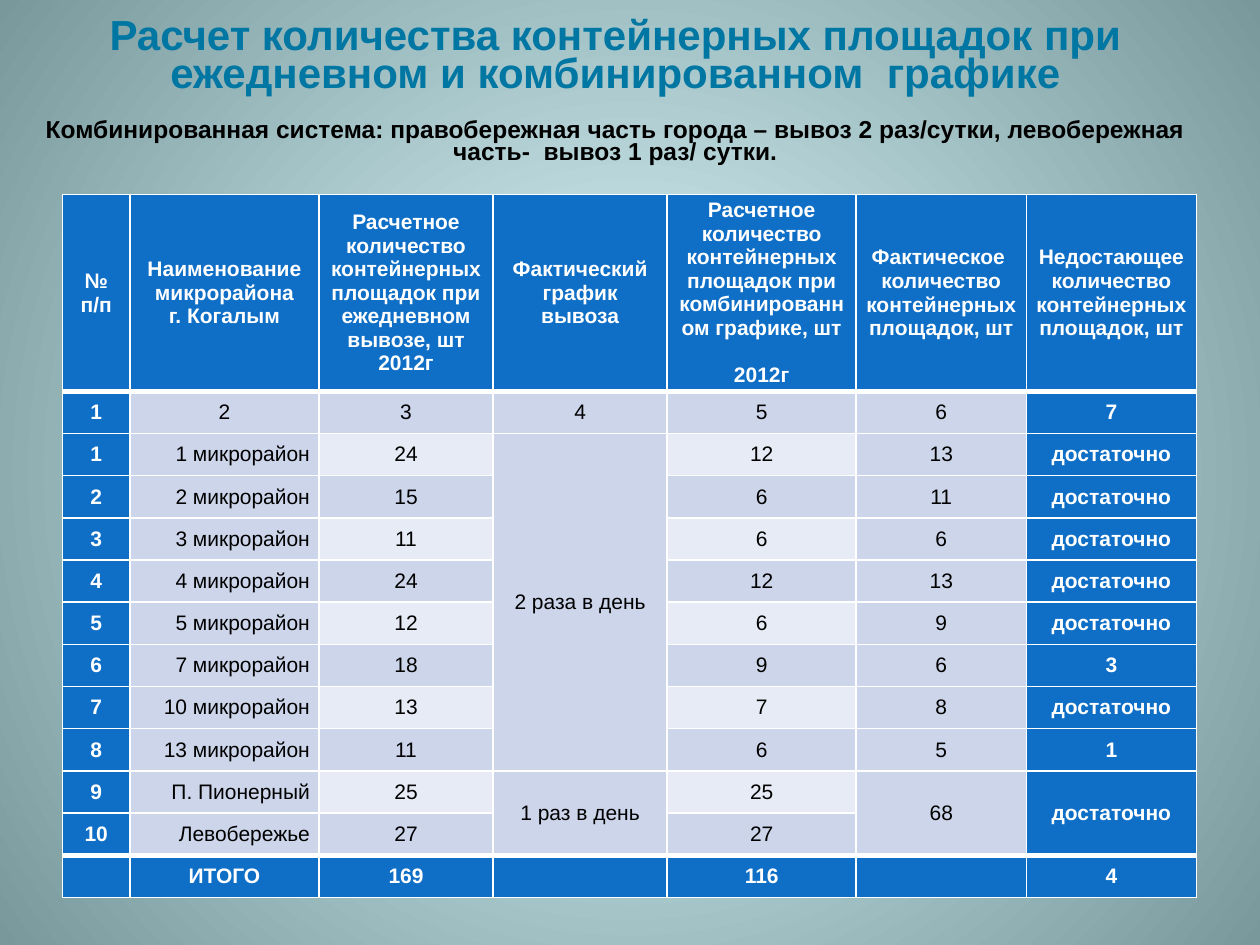
"""Build the slide with the container site calculation table."""
from dataclasses import dataclass

from lxml.etree import SubElement
from pptx import Presentation
from pptx.dml.color import RGBColor as Color
from pptx.enum.text import MSO_ANCHOR as Anchor, MSO_AUTO_SIZE as AutoSize, PP_ALIGN as Align
from pptx.oxml import parse_xml
from pptx.oxml.ns import nsdecls, qn
from pptx.util import Cm, Pt


@dataclass(frozen=True)
class Theme:
    """Keeps the colours, type sizes and line widths."""

    font: str = "Arial"
    title: str = "0076A3"
    dark: str = "000000"
    white: str = "FFFFFF"
    accent: str = "0F6FC6"
    band: str = "CCD5EA"
    light: str = "E7EBF5"
    glow: str = "DEFBFF"
    edge: str = "79989C"
    title_size: int = 24
    subtitle_size: int = 14
    table_size: int = 12
    thin: int = 1
    thick: int = 3


TITLE = "Расчет количества контейнерных площадок при ежедневном и комбинированном  графике"
SUBTITLE = ("Комбинированная система: правобережная часть города – вывоз 2 раз/сутки, "
            "левобережная часть-  вывоз 1 раз/ сутки.")
ENOUGH = "достаточно"
ROWS = [
    ["№\nп/п", "Наименование микрорайона\nг. Когалым",
     "Расчетное количество контейнерных площадок при ежедневном вывозе, шт\n2012г",
     "Фактический график вывоза",
     "Расчетное количество контейнерных площадок при комбинированном графике, шт\n2012г",
     "Фактическое  количество контейнерных площадок, шт",
     "Недостающее количество контейнерных площадок, шт"],
    ["1", "2", "3", "4", "5", "6", "7"],
    ["1", "1 микрорайон", "24", "2 раза в день", "12", "13", ENOUGH],
    ["2", "2 микрорайон", "15", "", "6", "11", ENOUGH],
    ["3", "3 микрорайон", "11", "", "6", "6", ENOUGH],
    ["4", "4 микрорайон", "24", "", "12", "13", ENOUGH],
    ["5", "5 микрорайон", "12", "", "6", "9", ENOUGH],
    ["6", "7 микрорайон", "18", "", "9", "6", "3"],
    ["7", "10 микрорайон", "13", "", "7", "8", ENOUGH],
    ["8", "13 микрорайон", "11", "", "6", "5", "1"],
    ["9", "П. Пионерный", "25", "1 раз в день", "25", "68", ENOUGH],
    ["10", "Левобережье", "27", "", "27", "", ""],
    ["", "ИТОГО", "169", "", "116", "", "4"],
]
COLUMN_WIDTHS = [1.36, 3.81, 3.51, 3.51, 3.81, 3.43, 3.43]
HEADER_HEIGHT, ROW_HEIGHT = 3.97, 0.85
MERGES = [(2, 3, 9, 3), (10, 3, 11, 3), (10, 5, 11, 5), (10, 6, 11, 6)]


def apply(target, values):
    """Set each named attribute of the target."""
    for name, value in values.items():
        setattr(target, name, value)


class SlideBuilder:
    """Holds the style and the current slide."""

    def __init__(self, presentation, theme):
        self.theme = theme
        self.slide = presentation.slides.add_slide(presentation.slide_layouts[5])

    def background(self):
        """Fill the slide with a radial gradient."""
        fill = self.slide.background.fill
        fill.gradient()
        for stop, color in zip(fill.gradient_stops, (self.theme.glow, self.theme.edge)):
            stop.color.rgb = Color.from_string(color)
        linear = next(self.slide.element.iter(qn("a:lin")))
        linear.getparent().replace(linear, parse_xml(
            f'<a:path {nsdecls("a")} path="circle">'
            '<a:fillToRect l="50000" t="50000" r="50000" b="50000"/></a:path>'))

    def text(self, paragraph, text, size, color, bold, **layout):
        """Put one styled run into a paragraph."""
        apply(paragraph, {"alignment": Align.CENTER, **layout})
        run = paragraph.add_run()
        run.text = text
        apply(run.font, {"name": self.theme.font, "size": Pt(size), "bold": bold})
        run.font.color.rgb = Color.from_string(color)

    def title(self, title, subtitle):
        """Set the heading and the explanation below it."""
        theme, shape = self.theme, self.slide.shapes.title
        apply(shape, {"left": Cm(0), "top": Cm(0), "width": Cm(24.81), "height": Cm(3.73)})
        frame = shape.text_frame
        apply(frame, {"word_wrap": True, "auto_size": AutoSize.NONE,
                      "vertical_anchor": Anchor.MIDDLE})
        self.text(frame.paragraphs[0], title, theme.title_size, theme.title, True,
                  line_spacing=0.75)
        self.text(frame.add_paragraph(), subtitle, theme.subtitle_size, theme.dark, True,
                  line_spacing=0.75, space_before=Pt(14))

    def borders(self, cell, top, bottom):
        """Draw white lines round a cell."""
        properties = cell._tc.get_or_add_tcPr()
        widths = {"lnL": self.theme.thin, "lnR": self.theme.thin, "lnT": top, "lnB": bottom}
        for side, width in widths.items():
            line = SubElement(properties, qn(f"a:{side}"), w=str(Pt(width)))
            solid = SubElement(line, qn("a:solidFill"))
            SubElement(solid, qn("a:srgbClr"), val=self.theme.white)

    def cell(self, cell, text, row, column, last_row, last_column):
        """Style and fill one table cell according to its place."""
        theme = self.theme
        strong = row in (0, last_row) or column in (0, last_column)
        striped = column in (2, 4) and row % 2 == 0
        named = column == 1 and 1 < row < last_row
        self.borders(cell,
                     theme.thick if row in (1, last_row) else theme.thin,
                     theme.thick if row in (0, last_row - 1) else theme.thin)
        apply(cell, {"margin_left": Cm(0.18), "margin_right": Cm(0.18), "margin_top": Cm(0),
                     "margin_bottom": Cm(0), "vertical_anchor": Anchor.MIDDLE})
        cell.fill.solid()
        cell.fill.fore_color.rgb = Color.from_string(
            theme.accent if strong else theme.light if striped else theme.band)
        frame = cell.text_frame
        for index, line in enumerate(text.split("\n") if text else []):
            paragraph = frame.add_paragraph() if index else frame.paragraphs[0]
            self.text(paragraph, line, theme.table_size,
                      theme.white if strong else theme.dark, strong,
                      alignment=Align.RIGHT if named else Align.CENTER)

    def table(self, rows, widths, merges):
        """Add the table and return it."""
        height = HEADER_HEIGHT + ROW_HEIGHT * (len(rows) - 1)
        table = self.slide.shapes.add_table(
            len(rows), len(widths), Cm(1.26), Cm(3.92), Cm(sum(widths)), Cm(height)).table
        apply(table, {"first_row": False, "horz_banding": False})
        for column, width in zip(table.columns, widths):
            column.width = Cm(width)
        for row_index, texts in enumerate(rows):
            table.rows[row_index].height = Cm(ROW_HEIGHT if row_index else HEADER_HEIGHT)
            for column_index, text in enumerate(texts):
                self.cell(table.cell(row_index, column_index), text, row_index, column_index,
                          len(rows) - 1, len(widths) - 1)
        for top, left, bottom, right in merges:
            table.cell(top, left).merge(table.cell(bottom, right))
        return table


def main():
    """Create and save the presentation."""
    presentation = Presentation()
    apply(presentation, {"slide_width": Cm(25.4), "slide_height": Cm(19.05)})
    builder = SlideBuilder(presentation, Theme())
    builder.background()
    builder.title(TITLE, SUBTITLE)
    table = builder.table(ROWS, COLUMN_WIDTHS, MERGES)
    table.cell(0, 4).text_frame.paragraphs[1].space_before = Pt(13.5)
    presentation.save("out.pptx")


if __name__ == "__main__":
    main()
